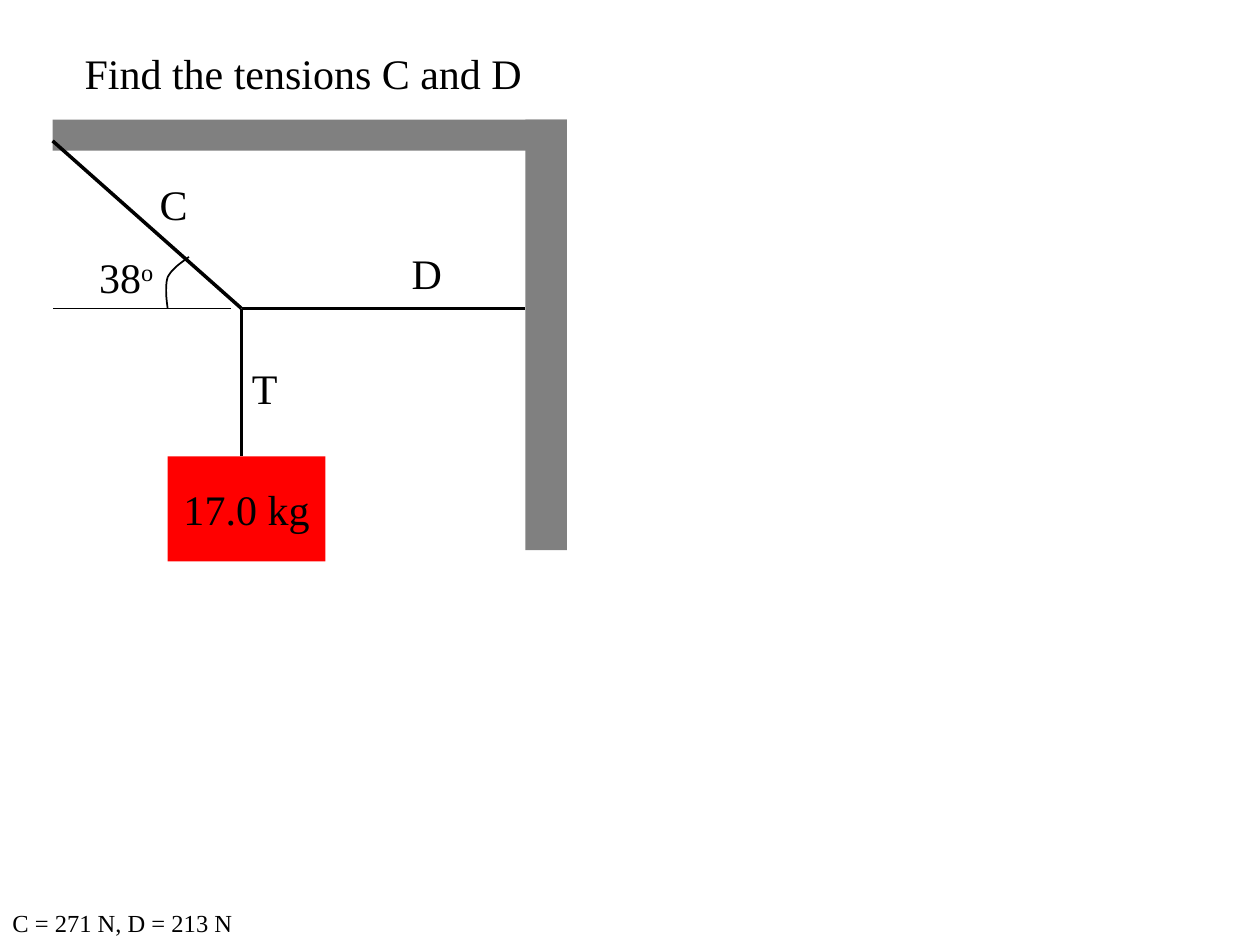
from lxml import etree
from pptx import Presentation
from pptx.dml.color import RGBColor
from pptx.enum.shapes import MSO_CONNECTOR, MSO_SHAPE
from pptx.enum.text import MSO_ANCHOR, MSO_AUTO_SIZE, PP_ALIGN
from pptx.oxml.ns import qn
from pptx.util import Cm, Pt

BLACK = RGBColor(0x00, 0x00, 0x00)
GREY = RGBColor(0x80, 0x80, 0x80)
RED = RGBColor(0xFF, 0x00, 0x00)
FONT = "Times New Roman"
STRAIGHT = MSO_CONNECTOR.STRAIGHT
RECTANGLE = MSO_SHAPE.RECTANGLE
LEFT, CENTER = PP_ALIGN.LEFT, PP_ALIGN.CENTER
TOP, MIDDLE = MSO_ANCHOR.TOP, MSO_ANCHOR.MIDDLE
NO_AUTOSIZE = MSO_AUTO_SIZE.NONE
LABEL_HEIGHT = 1.3
CURVE_STEPS = 12


def write_text(shape, text, raised="", size=24, align=LEFT, anchor=TOP):
    """Write one line of text, with an optional superscript after it."""
    frame = shape.text_frame
    frame.word_wrap = False
    frame.auto_size = NO_AUTOSIZE
    frame.vertical_anchor = anchor
    para = frame.paragraphs[0]
    para.alignment = align
    for part in filter(None, (text, raised)):
        span = para.add_run()
        span.text = part
        span.font.name = FONT
        span.font.size = Pt(size)
        span.font.color.rgb = BLACK
    if raised:
        span.font._element.set("baseline", "30000")


def add_label(page, left, top, width, text, height=LABEL_HEIGHT, **text_format):
    box = page.shapes.add_textbox(Cm(left), Cm(top), Cm(width), Cm(height))
    write_text(box, text, **text_format)


def add_block(page, left, top, width, height, color):
    block = page.shapes.add_shape(RECTANGLE, Cm(left), Cm(top), Cm(width), Cm(height))
    block.shadow.inherit = False
    block.fill.solid()
    block.fill.fore_color.rgb = color
    block.line.fill.background()
    return block


def add_rope(page, start, end, weight=2):
    rope = page.shapes.add_connector(STRAIGHT, *(Cm(value) for value in (*start, *end)))
    rope.line.color.rgb = BLACK
    rope.line.width = Pt(weight)
    etree.SubElement(rope._element.spPr, qn("a:effectLst"))


def curve_points(start, control_1, control_2, end):
    """Points along a cubic curve, without its start."""
    for step in range(1, CURVE_STEPS + 1):
        t = step / CURVE_STEPS
        weights = ((1 - t) ** 3, 3 * t * (1 - t) ** 2, 3 * t * t * (1 - t), t ** 3)
        yield tuple(
            Cm(sum(weight * value for weight, value in zip(weights, values)))
            for values in zip(start, control_1, control_2, end)
        )


def add_angle_arc(page, left, top):
    knots = [(2.75, 2.77), (2.57, 2.9), (2.4, 3.02), (2.32, 3.18),
             (2.27, 3.35), (2.29, 3.58), (2.32, 3.81)]
    knots = [(left + x, top + y) for x, y in knots]
    builder = page.shapes.build_freeform(Cm(knots[0][0]), Cm(knots[0][1]))
    points = [*curve_points(*knots[:4]), *curve_points(*knots[3:])]
    builder.add_line_segments(points, close=False)
    arc = builder.convert_to_shape()
    arc.shadow.inherit = False
    arc.fill.background()
    arc.line.color.rgb = BLACK
    arc.line.width = Pt(1)


def add_title(page, left, top, width, text):
    title = page.shapes.title
    title.left, title.top = Cm(left), Cm(top)
    title.width, title.height = Cm(width), Cm(LABEL_HEIGHT)
    write_text(title, text)


def add_diagram(page, left, top, width, height):
    """Draw the hanging mass, its ropes and the supports inside the box."""
    wall_width, ceiling_height = 0.84, 0.63
    wall_left = left + width - wall_width
    knot = (left + 3.81, top + 3.81)
    mass_top = top + 6.79

    mass = add_block(page, left + 2.32, mass_top, 3.18, 2.12, RED)
    write_text(mass, "17.0 kg", align=CENTER, anchor=MIDDLE)
    add_block(page, left, top, width, ceiling_height, GREY)
    add_block(page, wall_left, top, wall_width, height, GREY)

    for end in ((knot[0], mass_top), (left, top + 0.43), (wall_left, knot[1])):
        add_rope(page, knot, end)
    add_rope(page, (left + 3.6, knot[1]), (left, knot[1]), weight=1)
    add_angle_arc(page, left, top)

    add_label(page, left + 0.69, top + 2.54, 1.65, "38", raised="o")
    for x, y, name in ((3.77, 4.78, "T"), (1.91, 1.07, "C"), (6.99, 2.46, "D")):
        add_label(page, left + x, top + y, 1.1, name)


def main():
    deck = Presentation()
    deck.slide_width, deck.slide_height = Cm(25.4), Cm(19.05)
    page = deck.slides.add_slide(deck.slide_layouts[5])
    add_title(page, 1.45, 0.84, 9.42, "Find the tensions C and D")
    add_diagram(page, 1.06, 2.41, 10.37, 8.68)
    add_label(page, 0, 18.19, 4.98, "C = 271 N, D = 213 N", height=0.86, size=14)
    deck.save("out.pptx")


if __name__ == "__main__":
    main()
